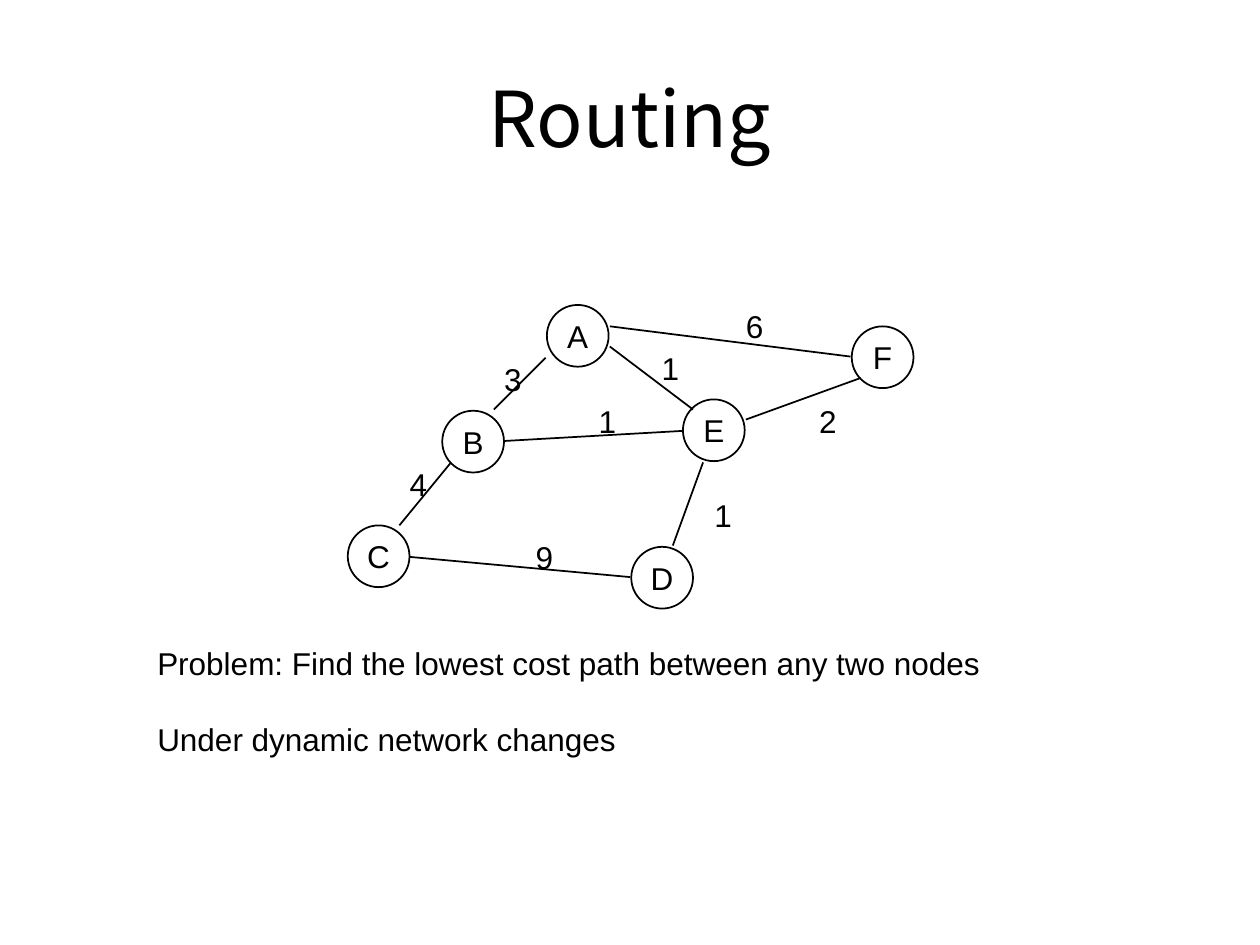
import pptx
import pptx.dml.color
import pptx.enum.shapes
import pptx.enum.text
import pptx.oxml.ns
import pptx.util
from lxml import etree
from pptx.util import Inches

BLACK = pptx.dml.color.RGBColor(0x00, 0x00, 0x00)
BODY_FONT = "Arial"
TITLE_FONT = "Noto Sans CJK KR"
ALIGN = pptx.enum.text.PP_ALIGN
ANCHOR = pptx.enum.text.MSO_ANCHOR

NODE_SIZE = 0.49
LABEL_WIDTH, LABEL_HEIGHT = 0.34, 0.4

# Left and top of each network node
NODES = {
    "A": (4.34, 2.42),
    "B": (3.51, 3.26),
    "C": (2.76, 4.17),
    "D": (5.01, 4.34),
    "E": (5.42, 3.17),
    "F": (6.76, 2.59),
}

# Cost, start, end, and left and top of the cost label
LINKS = [
    ("9", (3.25, 4.42), (5, 4.58), (4.15, 4.22)),
    ("4", (3.17, 4.17), (3.58, 3.67), (3.15, 3.64)),
    ("1", (4, 3.5), (5.42, 3.42), (4.65, 3.14)),
    ("1", (5.58, 3.67), (5.34, 4.33), (5.57, 3.89)),
    ("3", (3.92, 3.25), (4.33, 2.84), (3.9, 2.81)),
    ("1", (4.84, 2.75), (5.5, 3.25), (5.15, 2.72)),
    ("6", (4.84, 2.59), (6.75, 2.83), (5.82, 2.39)),
    ("2", (5.92, 3.33), (6.83, 3), (6.4, 3.14)),
]

STATEMENTS = [
    "Problem: Find the lowest cost path between any two nodes",
    "Under dynamic network changes",
]


def write_text(shape, *lines, size=18, font=BODY_FONT, align=ALIGN.CENTER,
               anchor=ANCHOR.MIDDLE, wrap=False, gap=0):
    """Fill a shape with one paragraph per line, gap points apart."""
    frame = shape.text_frame
    frame.word_wrap = wrap
    frame.vertical_anchor = anchor
    for index, line in enumerate(lines):
        paragraph = frame.add_paragraph() if index else frame.paragraphs[0]
        paragraph.alignment = align
        paragraph.space_before = pptx.util.Pt(gap if index else 0)
        run = paragraph.add_run()
        run.text = line
        run.font.size = pptx.util.Pt(size)
        run.font.name = font
        run.font.color.rgb = BLACK


def outline(shape):
    shape.line.color.rgb = BLACK
    shape.line.width = pptx.util.Pt(1)


def add_title(slide, text):
    title = slide.shapes.title
    title.left, title.top = Inches(0.5), Inches(0.3)
    title.width, title.height = Inches(9), Inches(1.25)
    write_text(title, text, size=44, font=TITLE_FONT, wrap=True)


def add_node(shapes, name, left, top):
    node = shapes.add_shape(
        pptx.enum.shapes.MSO_SHAPE.OVAL, Inches(left), Inches(top),
        Inches(NODE_SIZE), Inches(NODE_SIZE))
    node.shadow.inherit = False
    node.fill.background()
    outline(node)
    write_text(node, name)


def add_link(shapes, start, end):
    link = shapes.add_connector(
        pptx.enum.shapes.MSO_CONNECTOR.STRAIGHT,
        *(Inches(value) for value in (*start, *end)))
    outline(link)
    properties = link._element.spPr
    etree.SubElement(properties, pptx.oxml.ns.qn("a:effectLst"))


def add_text(shapes, left, top, width, height, *lines, **text_format):
    box = shapes.add_textbox(
        Inches(left), Inches(top), Inches(width), Inches(height))
    write_text(box, *lines, **text_format)


def add_network(slide):
    shapes = slide.shapes.add_group_shape().shapes
    for name, (left, top) in NODES.items():
        add_node(shapes, name, left, top)
    for cost, start, end, label_position in LINKS:
        add_link(shapes, start, end)
        add_text(shapes, *label_position, LABEL_WIDTH, LABEL_HEIGHT, cost)


def main():
    presentation = pptx.Presentation()
    presentation.slide_width = Inches(10)
    presentation.slide_height = Inches(7.5)
    title_only = presentation.slide_layouts[5]
    slide = presentation.slides.add_slide(title_only)
    add_title(slide, "Routing")
    add_network(slide)
    add_text(slide.shapes, 1.15, 5.06, 6.73, 1, *STATEMENTS,
             align=ALIGN.LEFT, anchor=ANCHOR.TOP, gap=22)
    presentation.save("out.pptx")


if __name__ == "__main__":
    main()
